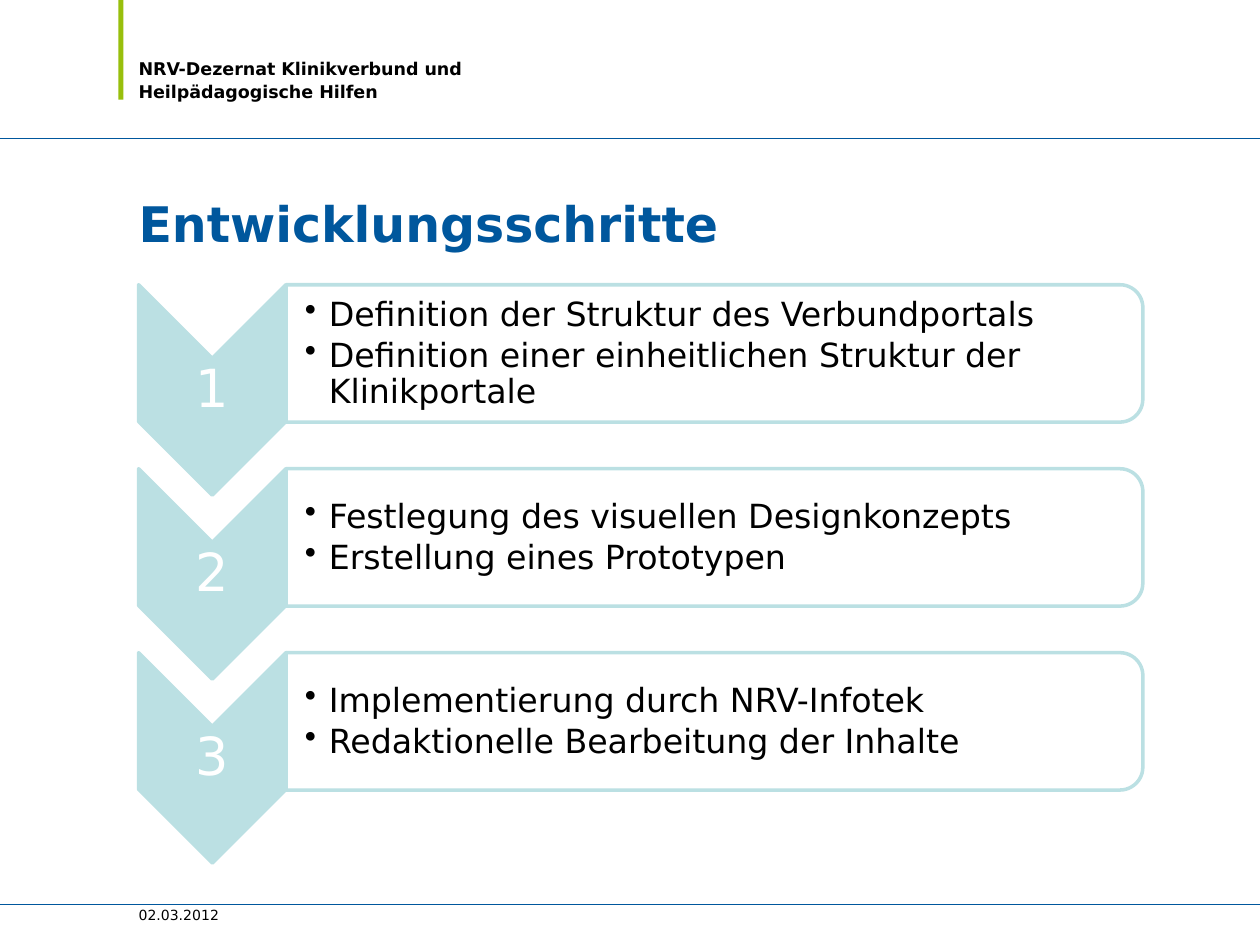
from dataclasses import dataclass

from lxml.etree import SubElement
from pptx import Presentation
from pptx.dml.color import RGBColor
from pptx.enum.shapes import MSO_CONNECTOR as Connector, MSO_SHAPE as Shape
from pptx.enum.text import MSO_ANCHOR as Anchor, PP_ALIGN as Align
from pptx.oxml.ns import qn
from pptx.util import Inches, Pt


@dataclass(frozen=True)
class Theme:
    font: str = "DejaVu Sans"
    blue: str = "00579D"
    green: str = "98BF0C"
    pale: str = "BBE0E3"
    white: str = "FFFFFF"
    black: str = "000000"
    title_size: float = 28
    number_size: float = 30
    body_size: float = 19
    header_size: float = 10
    date_size: float = 8


THEME = Theme()

# Layout in inches
LEFT = 1.1
STEP_TOP, STEP_PITCH = 2.26, 1.46
CHEVRON_WIDTH, CHEVRON_HEIGHT = 1.17, 1.67
PANEL_WIDTH, PANEL_HEIGHT = 6.8, 1.09

STEPS = [
    ("Definition der Struktur des Verbundportals",
     "Definition einer einheitlichen Struktur der Klinikportale"),
    ("Festlegung des visuellen Designkonzepts",
     "Erstellung eines Prototypen"),
    ("Implementierung durch NRV-Infotek",
     "Redaktionelle Bearbeitung der Inhalte"),
]


class SlideBuilder:
    def __init__(self, slide, theme):
        self.slide = slide
        self.theme = theme

    def fill_text(self, box, lines, size, color, spacing, bold=False,
                  align=Align.LEFT, anchor=Anchor.TOP, inset=0,
                  left_inset=None, bullets=False):
        frame = box.text_frame
        frame.word_wrap = True
        frame.vertical_anchor = anchor
        frame.margin_left = Inches(inset if left_inset is None else left_inset)
        frame.margin_top = frame.margin_right = frame.margin_bottom = Inches(inset)
        frame.text = "\n".join(lines)
        for para in frame.paragraphs:
            para.alignment = align
            para.line_spacing = spacing
            para.space_before = Pt(0)
            if bullets:
                para.level = 1
                para.space_after = Pt(2.85)
                self.add_bullet(para)
            font = para.font
            font.name, font.size, font.bold = self.theme.font, Pt(size), bold
            font.color.rgb = RGBColor.from_string(color)

    def add_bullet(self, para):
        properties = para._p.get_or_add_pPr()
        properties.set("marL", str(Inches(0.19)))
        properties.set("indent", str(Inches(-0.19)))
        SubElement(properties, qn("a:buChar"), char="•")

    def title(self, text, left, top, width, height):
        box = self.slide.shapes.title
        box.left, box.top = Inches(left), Inches(top)
        box.width, box.height = Inches(width), Inches(height)
        self.fill_text(box, [text], self.theme.title_size, self.theme.blue,
                       Pt(42), bold=True)

    def text(self, lines, left, top, width, height, **style):
        box = self.slide.shapes.add_textbox(
            Inches(left), Inches(top), Inches(width), Inches(height))
        self.fill_text(box, lines, **style)

    def rule(self, top):
        line = self.slide.shapes.add_connector(
            Connector.STRAIGHT, 0, Inches(top), Inches(10), Inches(top))
        line.line.color.rgb = RGBColor.from_string(self.theme.blue)
        line.line.width = Pt(0.57)
        SubElement(line._element.spPr, qn("a:effectLst"))

    def shape(self, kind, left, top, width, height, fill, line=None, opacity=None):
        shape = self.slide.shapes.add_shape(
            kind, Inches(left), Inches(top), Inches(width), Inches(height))
        shape.shadow.inherit = False
        shape.fill.solid()
        shape.fill.fore_color.rgb = RGBColor.from_string(fill)
        if opacity is not None:
            color = shape._element.spPr.find(qn("a:solidFill"))[0]
            SubElement(color, qn("a:alpha"), val=str(opacity * 1000))
        if line:
            shape.line.color.rgb = RGBColor.from_string(line)
            shape.line.width = Pt(2)
        else:
            shape.line.fill.background()
        return shape

    def turned_shape(self, kind, left, top, width, height, **style):
        """Place a shape turned by 90 degrees; the sizes are those seen."""
        shift = (width - height) / 2
        shape = self.shape(kind, left + shift, top - shift, height, width, **style)
        shape.rotation = 90

    def step(self, number, points, top):
        theme = self.theme
        panel_left = LEFT + CHEVRON_WIDTH
        # Numbered chevron pointing down
        self.turned_shape(Shape.CHEVRON, LEFT, top, CHEVRON_WIDTH, CHEVRON_HEIGHT,
                          fill=theme.pale, line=theme.pale)
        self.text([str(number)], LEFT, top + 0.59, CHEVRON_WIDTH, 0.5,
                  size=theme.number_size, color=theme.white, spacing=0.9,
                  align=Align.CENTER, anchor=Anchor.MIDDLE, inset=0.02)
        # Panel with bullet points
        self.turned_shape(Shape.ROUND_2_SAME_RECTANGLE, panel_left, top,
                          PANEL_WIDTH, PANEL_HEIGHT,
                          fill=theme.white, line=theme.pale, opacity=90)
        self.text(points, panel_left, top + 0.06, 6.74, 0.98,
                  size=theme.body_size, color=theme.black, spacing=0.9,
                  anchor=Anchor.MIDDLE, inset=0.01, left_inset=0.15, bullets=True)


def main():
    deck = Presentation()
    deck.slide_width, deck.slide_height = Inches(10), Inches(7.5)
    page = SlideBuilder(deck.slides.add_slide(deck.slide_layouts[5]), THEME)

    # Header and rules
    page.shape(Shape.RECTANGLE, 0.94, 0, 0.04, 0.79, fill=THEME.green)
    for top in (1.1, 7.18):
        page.rule(top)
    page.text(["NRV-Dezernat Klinikverbund und Heilpädagogische Hilfen"],
              LEFT, 0, 3.94, 0.81, size=THEME.header_size, color=THEME.black,
              spacing=Pt(13), bold=True, anchor=Anchor.BOTTOM)

    # Title and steps
    page.title("Entwicklungsschritte", LEFT, 1.42, 7.97, 0.79)
    for index, points in enumerate(STEPS):
        page.step(index + 1, points, STEP_TOP + index * STEP_PITCH)

    # Date
    page.text(["02.03.2012"], LEFT, 7.16, 5.51, 0.17, size=THEME.date_size,
              color=THEME.black, spacing=Pt(12))

    deck.save("out.pptx")


if __name__ == "__main__":
    main()
